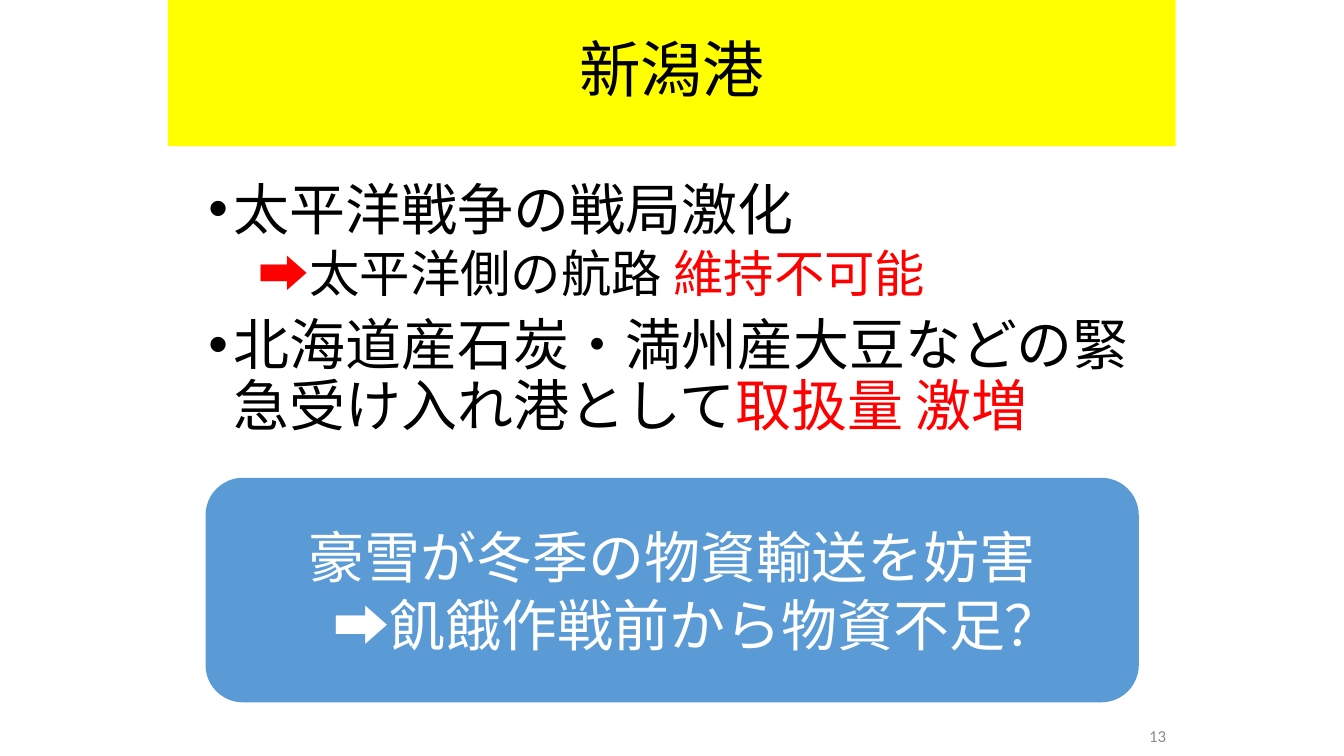
from lxml import etree
from pptx import Presentation
from pptx.dml.color import RGBColor
from pptx.enum.shapes import MSO_SHAPE
from pptx.enum.text import MSO_ANCHOR, MSO_AUTO_SIZE, PP_ALIGN
from pptx.oxml.ns import qn
from pptx.util import Cm, Pt

ROUNDED = MSO_SHAPE.ROUNDED_RECTANGLE
MIDDLE, TOP = MSO_ANCHOR.MIDDLE, MSO_ANCHOR.TOP
NO_AUTOFIT = MSO_AUTO_SIZE.NONE
CENTER, LEFT, RIGHT = PP_ALIGN.CENTER, PP_ALIGN.LEFT, PP_ALIGN.RIGHT

FONT = "Calibri"
BLACK = RGBColor(0x00, 0x00, 0x00)
WHITE = RGBColor(0xFF, 0xFF, 0xFF)
RED = RGBColor(0xFF, 0x00, 0x00)
YELLOW = RGBColor(0xFF, 0xFF, 0x00)
BLUE = RGBColor(0x5B, 0x9B, 0xD5)
GRAY = RGBColor(0x8C, 0x8C, 0x8C)


def place(shape, left, top, width, height):
    shape.left, shape.top = Cm(left), Cm(top)
    shape.width, shape.height = Cm(width), Cm(height)


def prepare_frame(shape, anchor):
    frame = shape.text_frame
    frame.word_wrap = True
    frame.auto_size = NO_AUTOFIT
    frame.vertical_anchor = anchor
    return frame


def set_indent(paragraph, margin, indent, bullet=None):
    properties = paragraph._p.get_or_add_pPr()
    properties.set("marL", str(Cm(margin)))
    properties.set("indent", str(Cm(indent)))
    if bullet:
        etree.SubElement(properties, qn("a:buFont")).set("typeface", "Arial")
        etree.SubElement(properties, qn("a:buChar")).set("char", bullet)
    else:
        etree.SubElement(properties, qn("a:buNone"))


def write(paragraph, parts, size, align=LEFT, spacing=1.0, before=0):
    """Fill a paragraph with (text, colour) parts."""
    paragraph.alignment = align
    paragraph.line_spacing = spacing
    paragraph.space_before = Pt(before)
    for text, color in parts:
        run = paragraph.add_run()
        run.text = text
        run.font.name = FONT
        run.font.size = Pt(size)
        run.font.color.rgb = color


def add_title(slide, text):
    title = slide.shapes.title
    place(title, 4.23, 0, 25.4, 3.68)
    title.fill.solid()
    title.fill.fore_color.rgb = YELLOW
    frame = prepare_frame(title, MIDDLE)
    write(frame.paragraphs[0], [(text, BLACK)], 44, CENTER, 0.9)


def add_list(slide, items):
    """Fill the body with (level, parts) items."""
    body = slide.placeholders[1]
    place(body, 5, 4.45, 23.85, 8.08)
    frame = prepare_frame(body, TOP)
    for number, (level, parts) in enumerate(items):
        paragraph = frame.add_paragraph() if number else frame.paragraphs[0]
        paragraph.level = level
        if level:
            set_indent(paragraph, 1.27, 0)
            size, before = 36, 5
        else:
            set_indent(paragraph, 0.64, -0.64, "•")
            size, before = 40, 10 if number else 0
        write(paragraph, parts, size, spacing=0.9, before=before)


def add_page_number(slide, text):
    box = slide.shapes.add_textbox(Cm(23.92), Cm(18.03), Cm(5.72), Cm(1.01))
    frame = prepare_frame(box, MIDDLE)
    write(frame.paragraphs[0], [(text, GRAY)], 12, RIGHT)


def add_callout(slide, first_line, second_line):
    callout = slide.shapes.add_shape(ROUNDED, Cm(5.18), Cm(12.04), Cm(23.52), Cm(5.66))
    callout.shadow.inherit = False
    callout.fill.solid()
    callout.fill.fore_color.rgb = BLUE
    callout.line.fill.background()
    frame = prepare_frame(callout, MIDDLE)
    write(frame.paragraphs[0], [(first_line, WHITE)], 40, CENTER)
    conclusion = frame.add_paragraph()
    conclusion.level = 1
    set_indent(conclusion, 1.27, 0)
    write(conclusion, [(second_line, WHITE)], 40, CENTER)


def main():
    presentation = Presentation()
    presentation.slide_width, presentation.slide_height = Cm(33.87), Cm(19.05)
    slide = presentation.slides.add_slide(presentation.slide_layouts[1])

    # Heading and list
    add_title(slide, "新潟港")
    add_list(slide, [
        (0, [("太平洋戦争の戦局激化", BLACK)]),
        (1, [("➡", RED), ("太平洋側の航路 ", BLACK), ("維持不可能", RED)]),
        (0, [("北海道産石炭・満州産大豆などの緊急受け入れ港として", BLACK),
             ("取扱量 激増", RED)]),
    ])

    # Page number and conclusion
    add_page_number(slide, "13")
    add_callout(slide, "豪雪が冬季の物資輸送を妨害", "➡飢餓作戦前から物資不足？")

    presentation.save("out.pptx")


if __name__ == "__main__":
    main()
